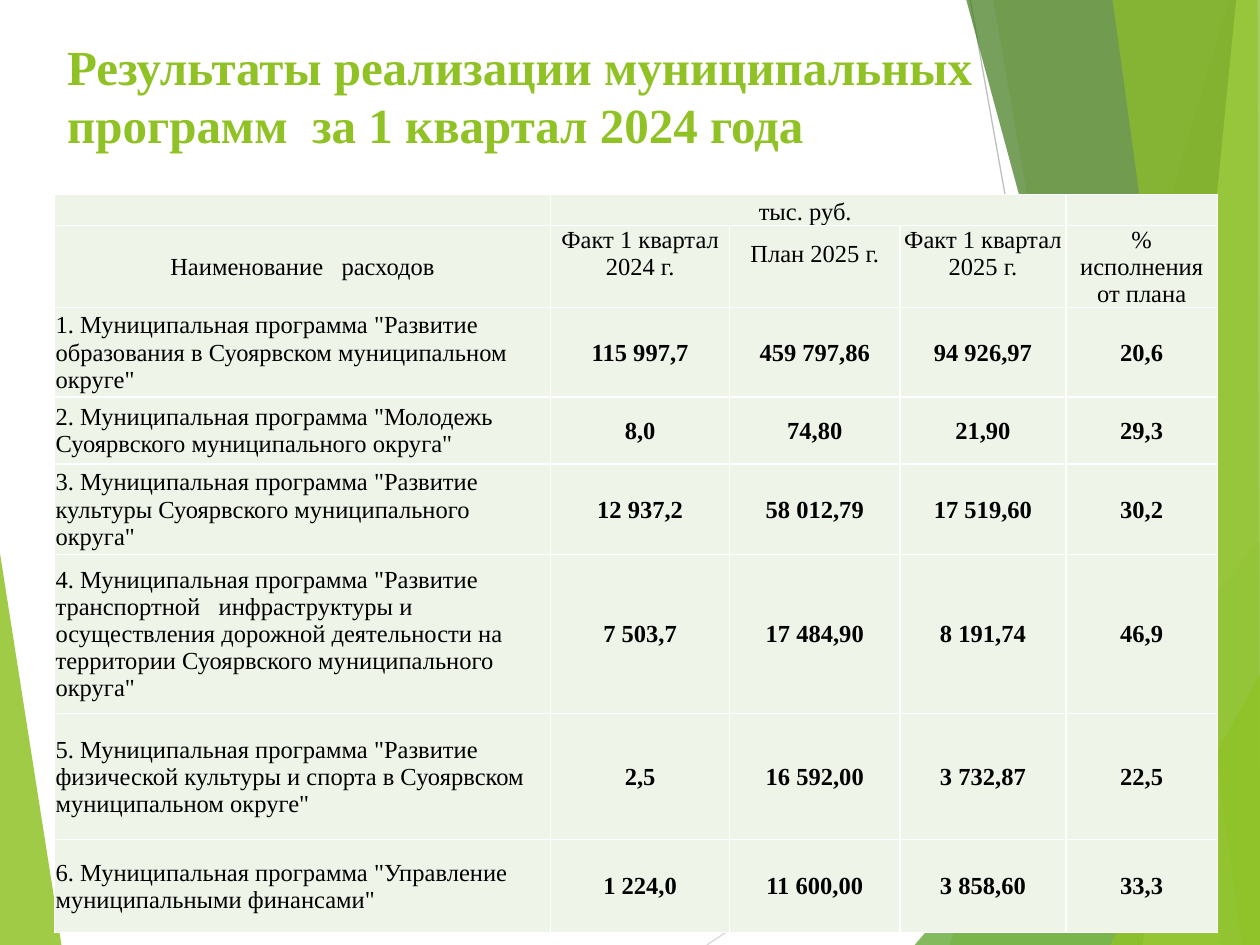
from lxml.etree import SubElement as Sub
from pptx import Presentation
from pptx.dml.color import RGBColor as RGB
from pptx.enum.shapes import MSO_CONNECTOR as Conn
from pptx.enum.text import MSO_ANCHOR as Anchor, MSO_AUTO_SIZE as Fit, PP_ALIGN as Align
from pptx.oxml.ns import qn
from pptx.util import Cm, Pt

# Content
TITLE = ["Результаты реализации муниципальных ", "программ  за 1 квартал 2024 года"]
UNIT = "тыс. руб. "
HEAD = ["Наименование   расходов", "Факт 1 квартал 2024 г.", "План 2025 г.",
        "Факт 1 квартал 2025 г.", "% исполнения от плана"]
ROWS = [
    ('1. Муниципальная программа "Развитие образования в Суоярвском муниципальном округе"',
     "115 997,7", "459 797,86", "94 926,97", "20,6"),
    ('2. Муниципальная программа "Молодежь Суоярвского муниципального округа"',
     "8,0", "74,80", "21,90", "29,3"),
    ('3. Муниципальная программа "Развитие культуры Суоярвского муниципального округа"',
     "12 937,2", "58 012,79", "17 519,60", "30,2"),
    ('4. Муниципальная программа "Развитие транспортной   инфраструктуры и осуществления '
     'дорожной деятельности на территории Суоярвского муниципального округа"',
     "7 503,7", "17 484,90", "8 191,74", "46,9"),
    ('5. Муниципальная программа "Развитие физической культуры и спорта в Суоярвском '
     'муниципальном округе"',
     "2,5", "16 592,00", "3 732,87", "22,5"),
    ('6. Муниципальная программа "Управление муниципальными финансами"',
     "1 224,0", "11 600,00", "3 858,60", "33,3"),
]

# Theme and measures in centimetres
THEME = {"font": "Times New Roman", "title": 28, "body": 14, "green": "90C226",
         "ink": "000000", "cell": "EEF4E8", "rule": "FFFFFF"}
W, H = 25.4, 19.05
WIDTHS = [10, 3.61, 3.43, 3.35, 3.05]
HEIGHTS = [0.57, 1.6, 1.8, 1.35, 1.83, 3.2, 2.54, 1.88]
LEFT, TOP = 1.1, 3.92
INSET, LIFT = 0.02, 0.5

# Backdrop: colour, opacity in percent, corners
LEAF = [(THEME["green"], 85, [(0, 11.15), (1.24, H), (0, H)])]
LINES = [("D9D9D9", (14.25, H), (W, 11.6)), ("BFBFBF", (19.56, 0), (22.96, H))]
FACETS = [
    (THEME["green"], 30, [(24.77, 0), (19.15, H), (W, H), (W, 0)]),
    (THEME["green"], 20, [(20.02, 0), (23.34, H), (W, H), (W, 0)]),
    ("54A021", 72, [(18.44, H), (W, 10.9), (W, H)]),
    ("3F7819", 70, [(19.48, 0), (24.64, H), (W, H), (W, 0)]),
    ("C0E474", 70, [(24.92, 0), (23.04, H), (W, H), (W, 0)]),
    (THEME["green"], 65, [(22.43, 0), (25.04, H), (W, H), (25.35, 0)]),
    (THEME["green"], 80, [(22.38, H), (W, 13.59), (W, H)]),
]


def add_facet(shapes, color, alpha, points):
    first, *rest = [(Cm(x), Cm(y)) for x, y in points]
    form = shapes.build_freeform(*first)
    form.add_line_segments(rest, close=True)
    shape = form.convert_to_shape()
    shape.shadow.inherit = False
    shape.fill.solid()
    shape.fill.fore_color.rgb = RGB.from_string(color)
    tint = shape.element.spPr.find(qn("a:solidFill"))[0]
    Sub(tint, qn("a:alpha"), val=str(alpha * 1000))
    shape.line.fill.background()


def add_line(shapes, color, start, end):
    line = shapes.add_connector(Conn.STRAIGHT, *map(Cm, start + end))
    line.line.color.rgb = RGB.from_string(color)
    line.line.width = Pt(0.75)
    Sub(line.element.spPr, qn("a:effectLst"))


def add_run(para, text, size, color, bold=False):
    run = para.add_run()
    run.text = text
    font = run.font
    font.name, font.size, font.bold = THEME["font"], Pt(size), bold
    font.color.rgb = RGB.from_string(color)


def style_cell(cell):
    cell.margin_left = cell.margin_right = cell.margin_top = Cm(INSET)
    cell.margin_bottom = 0
    props = cell._tc.get_or_add_tcPr()
    for side in ("lnL", "lnR", "lnT", "lnB"):
        edge = Sub(props, qn(f"a:{side}"), w=str(Pt(1)))
        Sub(Sub(edge, qn("a:solidFill")), qn("a:srgbClr"), val=THEME["rule"])
    cell.fill.solid()
    cell.fill.fore_color.rgb = RGB.from_string(THEME["cell"])


def fill_cell(cell, text, align=Align.CENTER, anchor=Anchor.MIDDLE, bold=False):
    para = cell.text_frame.paragraphs[0]
    para.alignment = align
    cell.vertical_anchor = anchor
    if text:
        add_run(para, text, THEME["body"], THEME["ink"], bold)
    else:
        Sub(para._p, qn("a:endParaRPr"), sz=str(THEME["body"] * 100))


def add_title(slide):
    title = slide.shapes.title
    title.left, title.top, title.width, title.height = map(Cm, (1.1, 0.6, 22.2, 3.65))
    frame = title.text_frame
    frame.word_wrap, frame.auto_size = True, Fit.NONE
    frame.vertical_anchor = Anchor.TOP
    para = frame.paragraphs[0]
    para.alignment = Align.LEFT
    for i, text in enumerate(TITLE):
        if i:
            para.add_line_break()
        add_run(para, text, THEME["title"], THEME["green"], True)
    title.element.getparent().append(title.element)  # in front of the backdrop


def add_grid(shapes):
    table = shapes.add_table(len(HEIGHTS), len(WIDTHS), Cm(LEFT), Cm(TOP),
                             Cm(sum(WIDTHS)), Cm(sum(HEIGHTS))).table
    table.first_row = table.horz_banding = False
    for col, width in zip(table.columns, WIDTHS):
        col.width = Cm(width)
    for row, height in zip(table.rows, HEIGHTS):
        row.height = Cm(height)
    for cell in table.iter_cells():
        style_cell(cell)

    # Unit row and headings
    for c, text in enumerate(["", UNIT, "", "", ""]):
        fill_cell(table.cell(0, c), text, anchor=Anchor.BOTTOM)
    table.cell(0, 1).merge(table.cell(0, 3))
    for c, text in enumerate(HEAD):
        fill_cell(table.cell(1, c), text,
                  anchor=Anchor.MIDDLE if c in (0, 2) else Anchor.TOP)
    table.cell(1, 2).margin_bottom = Cm(LIFT)

    # Programmes
    for r, (name, *values) in enumerate(ROWS, 2):
        fill_cell(table.cell(r, 0), name, Align.LEFT)
        for c, value in enumerate(values, 1):
            fill_cell(table.cell(r, c), value, bold=True)


def main():
    deck = Presentation()
    deck.slide_width, deck.slide_height = Cm(W), Cm(H)
    slide = deck.slides.add_slide(deck.slide_layouts[5])
    shapes = slide.shapes
    for facet in LEAF:
        add_facet(shapes, *facet)
    for line in LINES:
        add_line(shapes, *line)
    for facet in FACETS:
        add_facet(shapes, *facet)
    add_title(slide)
    add_grid(shapes)
    deck.save("out.pptx")


if __name__ == "__main__":
    main()
